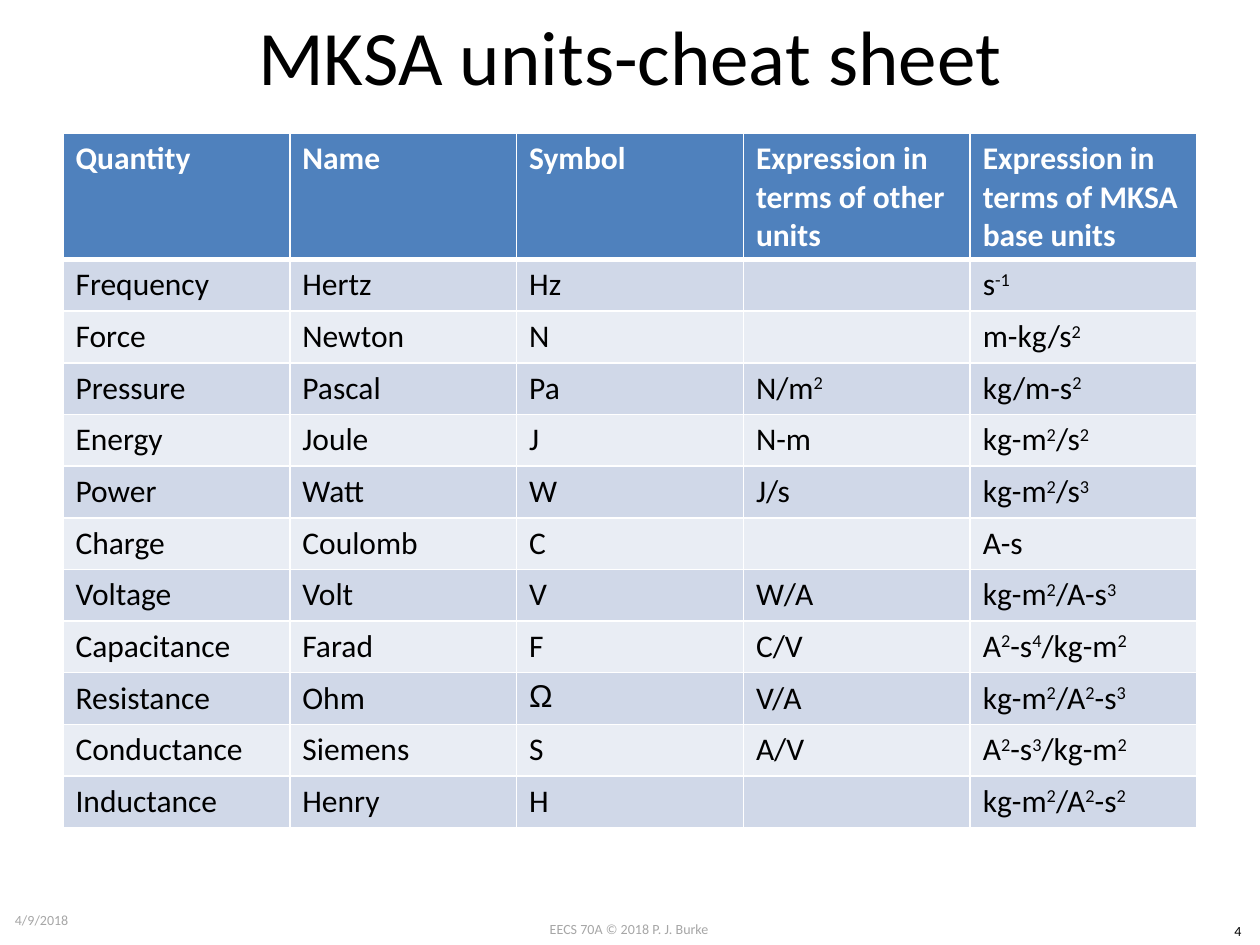
from lxml.etree import SubElement
from pptx import Presentation
from pptx.dml.color import RGBColor
from pptx.enum.text import MSO_ANCHOR, PP_ALIGN
from pptx.oxml.ns import qn
from pptx.util import Inches, Pt

COLORS = {
    "black": "000000",
    "white": "FFFFFF",
    "gray": "A6A6A6",
    "header": "4F81BD",
    "odd_row": "D0D8E8",
    "even_row": "E9EDF4",
}

# Braces mark superscripts
UNITS = [
    ("Quantity", "Name", "Symbol", "Expression in terms of other units",
     "Expression in terms of MKSA base units"),
    ("Frequency", "Hertz", "Hz", "", "s{-1}"),
    ("Force", "Newton", "N", "", "m-kg/s{2}"),
    ("Pressure", "Pascal", "Pa", "N/m{2}", "kg/m-s{2}"),
    ("Energy", "Joule", "J", "N-m", "kg-m{2}/s{2}"),
    ("Power", "Watt", "W", "J/s", "kg-m{2}/s{3}"),
    ("Charge", "Coulomb", "C", "", "A-s"),
    ("Voltage", "Volt", "V", "W/A", "kg-m{2}/A-s{3}"),
    ("Capacitance", "Farad", "F", "C/V", "A{2}-s{4}/kg-m{2}"),
    ("Resistance", "Ohm", "Ω", "V/A", "kg-m{2}/A{2}-s{3}"),
    ("Conductance", "Siemens", "S", "A/V", "A{2}-s{3}/kg-m{2}"),
    ("Inductance", "Henry", "H", "", "kg-m{2}/A{2}-s{2}"),
]


class SlideBuilder:
    """Holds the style and the current slide."""

    font = "Calibri"
    symbol_font = "Arial"

    def __init__(self, page):
        self.page = page

    def color(self, name):
        return RGBColor.from_string(COLORS[name])

    def fill_paragraph(self, para, text, size, color, bold=False):
        font = para.font
        font.name = self.symbol_font if text == "Ω" else self.font
        font.size = Pt(size)
        font.bold = bold
        font.color.rgb = self.color(color)
        for index, part in enumerate(text.replace("}", "{").split("{")):
            if part:
                span = para.add_run()
                span.text = part
                if index % 2:
                    span._r.get_or_add_rPr().set("baseline", "30000")

    def text(self, text, left, top, width, height, size, color,
             align=PP_ALIGN.CENTER, anchor=MSO_ANCHOR.TOP):
        box = self.page.shapes.add_textbox(
            Inches(left), Inches(top), Inches(width), Inches(height))
        frame = box.text_frame
        frame.word_wrap = True
        frame.vertical_anchor = anchor
        para = frame.paragraphs[0]
        para.alignment = align
        self.fill_paragraph(para, text, size, color)

    def borders(self, cell, top, bottom):
        properties = cell._tc.get_or_add_tcPr()
        for side, width in (("L", 1), ("R", 1), ("T", top), ("B", bottom)):
            line = SubElement(properties, qn(f"a:ln{side}"), w=str(Pt(width)))
            fill = SubElement(line, qn("a:solidFill"))
            SubElement(fill, qn("a:srgbClr"), val=COLORS["white"])

    def table(self, rows, left, top, width, header_height, row_height):
        height = header_height + row_height * (len(rows) - 1)
        table = self.page.shapes.add_table(
            len(rows), len(rows[0]), Inches(left), Inches(top),
            Inches(width), Inches(height)).table
        for column in table.columns:
            column.width = Inches(width / len(rows[0]))
        for r, values in enumerate(rows):
            header = r == 0
            table.rows[r].height = Inches(header_height if header else row_height)
            band = "header" if header else "odd_row" if r % 2 else "even_row"
            for c, value in enumerate(values):
                cell = table.cell(r, c)
                # The rule below the header is thicker
                self.borders(cell, 3 if r == 1 else 1, 3 if header else 1)
                cell.fill.solid()
                cell.fill.fore_color.rgb = self.color(band)
                self.fill_paragraph(cell.text_frame.paragraphs[0], value, 18,
                                    "white" if header else "black", header)


def main():
    deck = Presentation()
    deck.slide_width, deck.slide_height = Inches(10), Inches(7.5)
    builder = SlideBuilder(deck.slides.add_slide(deck.slide_layouts[6]))

    # Title
    builder.text("MKSA units-cheat sheet", 0.5, -0.19, 9, 1.25, 44, "black",
                 anchor=MSO_ANCHOR.MIDDLE)

    # Unit table
    builder.table(UNITS, 0.5, 1.06, 9, 1, 0.41)

    # Footer, page number and date
    builder.text("EECS 70A © 2018 P. J. Burke", 3.83, 7.26, 2.33, 0.24, 8, "gray")
    builder.text("4", 9.65, 7.27, 0.35, 0.24, 8, "black")
    builder.text("4/9/2018", 0.02, 7.1, 2.33, 0.4, 8, "gray",
                 PP_ALIGN.LEFT, MSO_ANCHOR.MIDDLE)

    deck.save("out.pptx")


if __name__ == "__main__":
    main()
